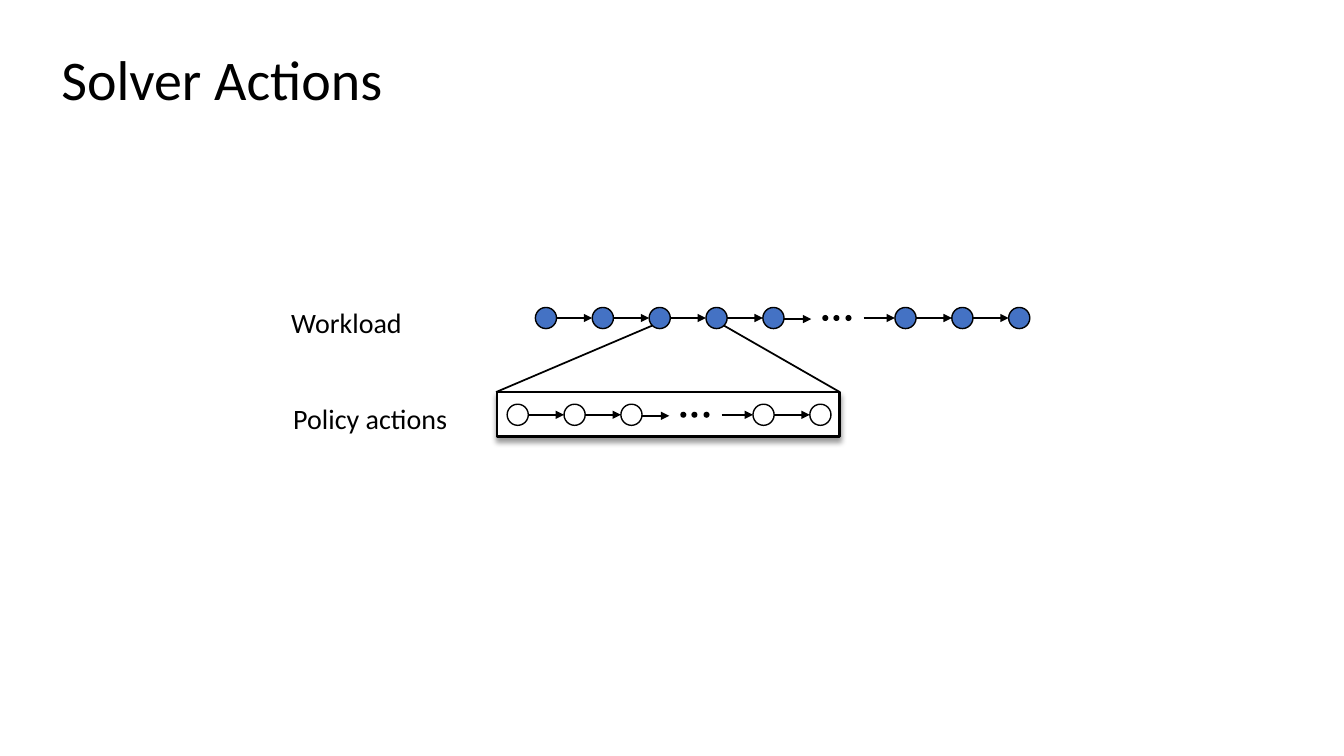
from lxml import etree
from pptx import Presentation
from pptx.dml.color import RGBColor
from pptx.enum.shapes import MSO_CONNECTOR, MSO_SHAPE
from pptx.enum.text import MSO_ANCHOR, PP_ALIGN
from pptx.oxml.ns import qn
from pptx.util import Inches, Pt

OVAL, RECT = MSO_SHAPE.OVAL, MSO_SHAPE.RECTANGLE
STRAIGHT = MSO_CONNECTOR.STRAIGHT
FONT, BLACK, WHITE, BLUE = "Calibri", "000000", "FFFFFF", "4472C4"

# Content: text, left, top, width, height
TITLE = ("Solver Actions", 0.49, 0.39, 3.42, 0.77)
WORKLOAD_LABEL = ("Workload", 2.79, 2.98, 1.31, 0.44)
POLICY_LABEL = ("Policy actions", 2.81, 3.93, 1.75, 0.44)

# Chains: left, top, nodes before the dots, nodes after, fill
WORKLOAD = (5.31, 3.05, 5, 3, BLUE)
POLICY = (5.03, 4.01, 3, 2, WHITE)
POLICY_BOX = (4.93, 3.89, 3.4, 0.44)
ZOOM_LINES = [(6.47, 3.23, 4.92, 3.89), (7.18, 3.23, 8.33, 3.89)]

# Chain geometry; offsets are from the last node before the dots
NODE, STEP, BREAK = 0.21, 0.564, 1.31
DOT, DOT_OFFSETS = 0.06, (0.59, 0.7, 0.82)
BREAK_OUT, BREAK_IN = 0.48, 1.0


def color(value):
    return RGBColor.from_string(value)


def add_shape(shapes, kind, box, fill, width=None):
    sp = shapes.add_shape(kind, *map(Inches, box))
    sp.shadow.inherit = False
    sp.fill.solid()
    sp.fill.fore_color.rgb = color(fill)
    if width:
        sp.line.color.rgb = color(BLACK)
        sp.line.width = Pt(width)
    else:
        sp.line.fill.background()
    return sp


def add_line(shapes, ends, width, arrow=False):
    line = shapes.add_connector(STRAIGHT, *map(Inches, ends))
    line.line.color.rgb = color(BLACK)
    line.line.width = Pt(width)
    sp_pr = line._element.spPr
    if arrow:
        etree.SubElement(sp_pr.find(qn("a:ln")), qn("a:tailEnd"), type="triangle")
    etree.SubElement(sp_pr, qn("a:effectLst"))


def add_shadow(sp):
    effects = sp._element.spPr.find(qn("a:effectLst"))
    shadow = etree.SubElement(effects, qn("a:outerShdw"), blurRad=str(Pt(4)),
                              dist=str(Pt(3)), dir="5400000", rotWithShape="0")
    tint = etree.SubElement(shadow, qn("a:srgbClr"), val=BLACK)
    etree.SubElement(tint, qn("a:alpha"), val="40000")


def set_text(sp, text, size, align):
    tf = sp.text_frame
    tf.text = text
    tf.word_wrap = False
    p = tf.paragraphs[0]
    p.alignment = align
    p.font.name, p.font.size = FONT, Pt(size)
    p.font.color.rgb = color(BLACK)


def add_label(shapes, text, *box):
    set_text(shapes.add_textbox(*map(Inches, box)), text, 20, PP_ALIGN.LEFT)


def add_chain(shapes, left, top, before, after, fill):
    last = left + (before - 1) * STEP
    runs = [[left + i * STEP for i in range(before)],
            [last + BREAK + i * STEP for i in range(after)]]
    mid = top + NODE / 2

    # Nodes and dots
    for x in runs[0] + runs[1]:
        add_shape(shapes, OVAL, (x, top, NODE, NODE), fill, 1)
    for offset in DOT_OFFSETS:
        add_shape(shapes, OVAL, (last + offset, mid - DOT / 2, DOT, DOT), BLACK)

    # Arrows between neighbours, then into and out of the dots
    for run in runs:
        for a, b in zip(run, run[1:]):
            add_line(shapes, (a + NODE, mid, b, mid), 1.5, True)
    add_line(shapes, (last + NODE, mid + 0.01, last + BREAK_OUT, mid + 0.01), 1.5, True)
    add_line(shapes, (last + BREAK_IN, mid, last + BREAK, mid), 1.5, True)


prs = Presentation()
prs.slide_width, prs.slide_height = Inches(13.33), Inches(7.5)
s = prs.slides.add_slide(prs.slide_layouts[5])

# Title
title = s.shapes.title
title.left, title.top, title.width, title.height = map(Inches, TITLE[1:])
set_text(title, TITLE[0], 40, PP_ALIGN.CENTER)
title.text_frame.vertical_anchor = MSO_ANCHOR.MIDDLE

# Policy actions inside the zoomed box
policy = s.shapes.add_group_shape().shapes
add_shadow(add_shape(policy, RECT, POLICY_BOX, WHITE, 2))
add_chain(policy, *POLICY)
for ends in ZOOM_LINES:
    add_line(policy, ends, 1.25)
add_label(s.shapes, *POLICY_LABEL)

# Workload
workload = s.shapes.add_group_shape().shapes
add_chain(workload, *WORKLOAD)
add_label(workload, *WORKLOAD_LABEL)

prs.save("out.pptx")
